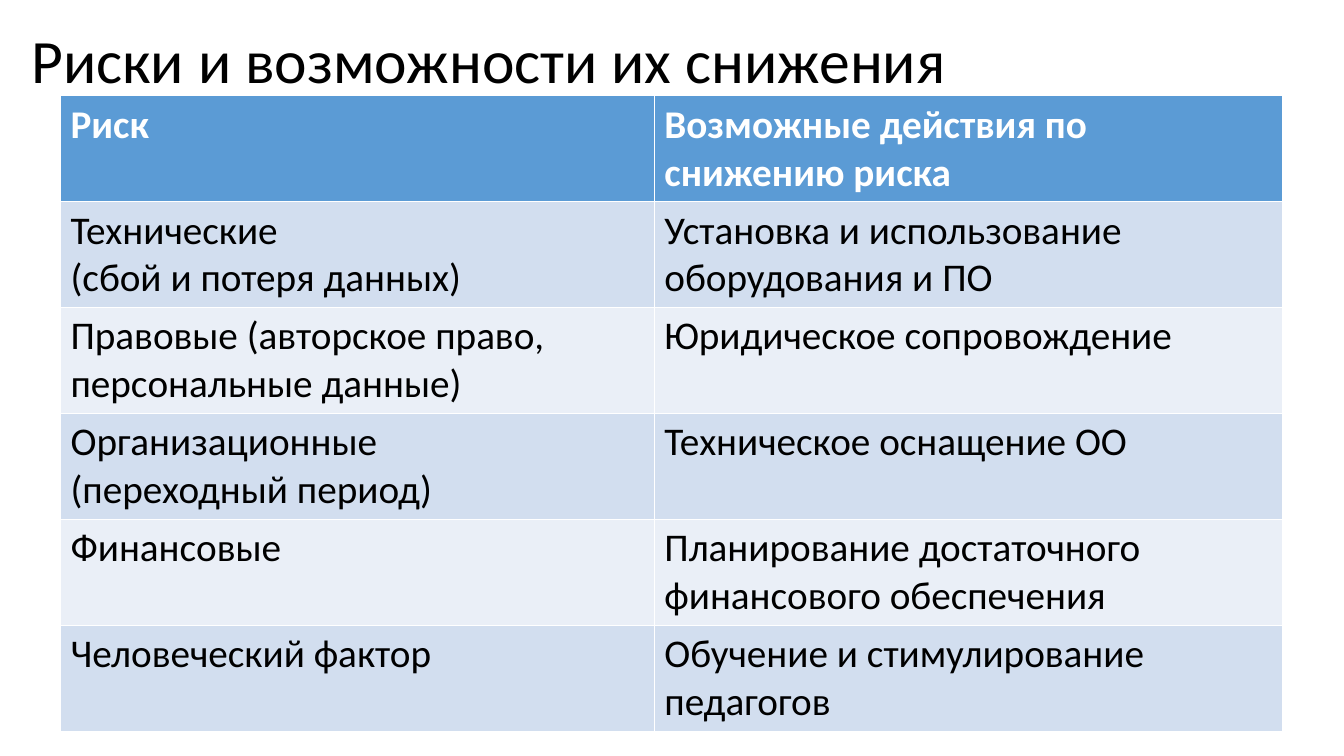
from pptx import Presentation
from pptx.dml.color import RGBColor
from pptx.enum import text
from pptx.util import Inches, Pt

TITLE = "Риски и возможности их снижения"
ROWS = [
    ("Риск", "Возможные действия по снижению риска"),
    ("Технические\n(сбой и потеря данных)", "Установка и использование оборудования и ПО"),
    ("Правовые (авторское право, персональные данные)", "Юридическое сопровождение"),
    ("Организационные\n(переходный период)", "Техническое оснащение ОО"),
    ("Финансовые", "Планирование достаточного финансового обеспечения"),
    ("Человеческий фактор", "Обучение и стимулирование педагогов"),
]
COLUMN_WIDTHS = (5.89, 6.23)
ROW_HEIGHT = 1.05
COLORS = {
    "header": "5B9BD5",
    "odd": "D2DEEF",
    "even": "EAEFF7",
    "light": "FFFFFF",
    "dark": "000000",
}


def style_font(para, size, color, bold=False):
    para.font.name = "Calibri"
    para.font.size = Pt(size)
    para.font.bold = bold
    para.font.color.rgb = RGBColor.from_string(COLORS[color])


def add_title(page):
    title = page.shapes.title
    title.left, title.top = Inches(0.21), Inches(0.25)
    title.width, title.height = Inches(11.5), Inches(1.45)
    frame = title.text_frame
    frame.text = TITLE
    frame.word_wrap = True
    frame.auto_size = text.MSO_AUTO_SIZE.NONE
    frame.vertical_anchor = text.MSO_ANCHOR.TOP
    para = frame.paragraphs[0]
    para.alignment = text.PP_ALIGN.LEFT
    para.line_spacing = 0.9
    style_font(para, 44, "dark")


def add_risk_table(page):
    table = page.shapes.add_table(
        len(ROWS), len(COLUMN_WIDTHS), Inches(0.6), Inches(0.95),
        Inches(sum(COLUMN_WIDTHS)), Inches(ROW_HEIGHT * len(ROWS)),
    ).table
    for column, width in zip(table.columns, COLUMN_WIDTHS):
        column.width = Inches(width)
    for r, labels in enumerate(ROWS):
        table.rows[r].height = Inches(ROW_HEIGHT)
        is_header = r == 0
        fill = "header" if is_header else ("odd" if r % 2 else "even")
        for c, label in enumerate(labels):
            cell = table.cell(r, c)
            cell.text = label
            cell.fill.solid()
            cell.fill.fore_color.rgb = RGBColor.from_string(COLORS[fill])
            for para in cell.text_frame.paragraphs:
                style_font(para, 28, "light" if is_header else "dark", is_header)


def main():
    deck = Presentation()
    deck.slide_width, deck.slide_height = Inches(13.33), Inches(7.5)
    page = deck.slides.add_slide(deck.slide_layouts[5])
    add_title(page)
    add_risk_table(page)
    deck.save("out.pptx")


if __name__ == "__main__":
    main()
